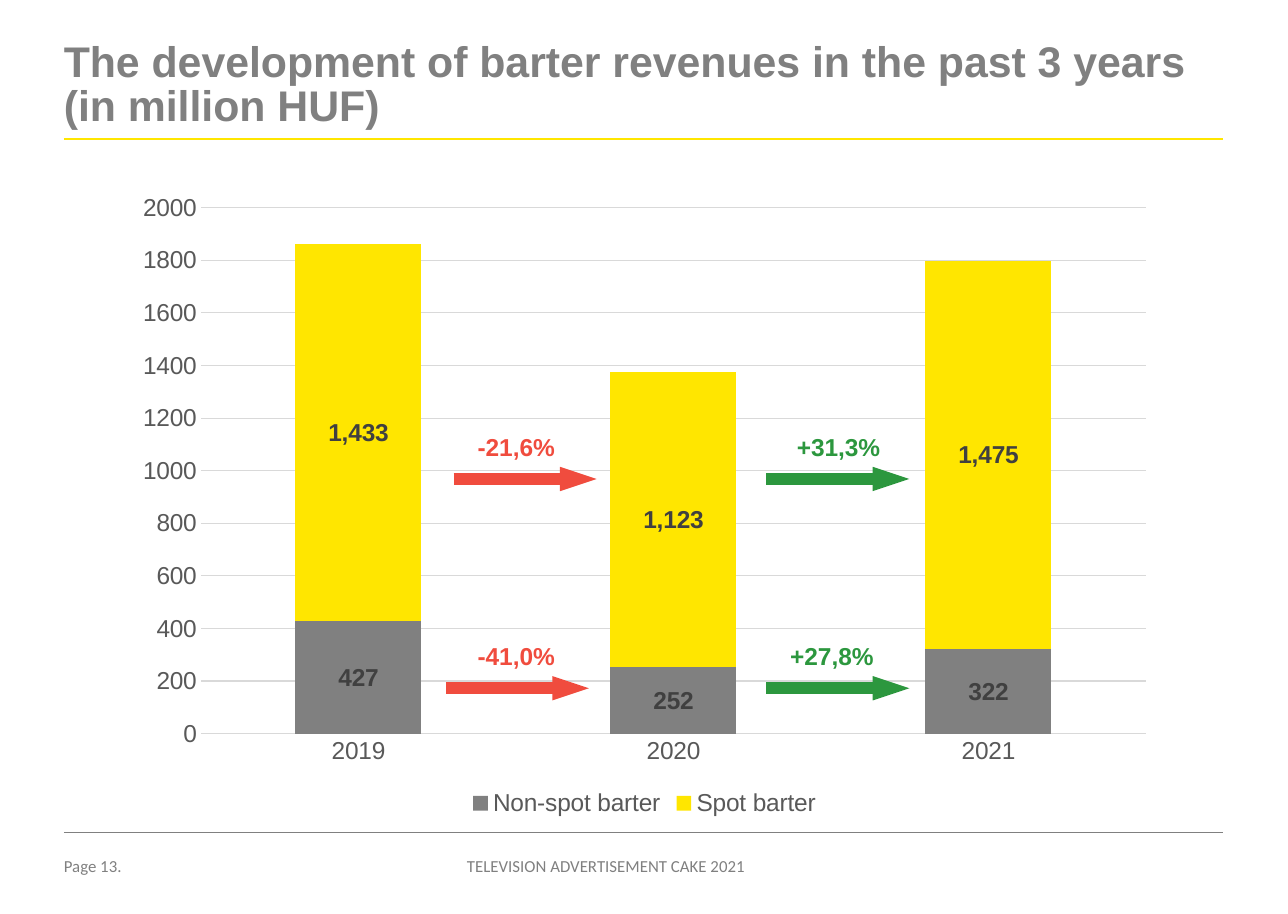
from pptx import Presentation
from pptx.chart.data import CategoryChartData
from pptx.dml.color import RGBColor
from pptx.enum.chart import XL_CHART_TYPE, XL_LABEL_POSITION, XL_LEGEND_POSITION, XL_TICK_MARK
from pptx.enum.shapes import MSO_CONNECTOR
from pptx.enum.text import PP_ALIGN
from pptx.oxml.ns import qn
from pptx.util import Inches, Pt
from lxml import etree

STACKED = XL_CHART_TYPE.COLUMN_STACKED
CENTER = XL_LABEL_POSITION.CENTER
BOTTOM = XL_LEGEND_POSITION.BOTTOM
NO_TICK = XL_TICK_MARK.NONE
STRAIGHT = MSO_CONNECTOR.STRAIGHT
LEFT, MIDDLE = PP_ALIGN.LEFT, PP_ALIGN.CENTER

GRAY, YELLOW, RED, GREEN = "808080", "FFE600", "F04C3E", "2C973E"
RULE, INK, DARK = "D9D9D9", "595959", "404040"
WIDE, HIGH = 11.7, 8.3
EDGE, SPAN = 0.58, 10.53
YEARS = ["2019", "2020", "2021"]
SERIES = [
    ("Non-spot barter", (427, 252, 322), GRAY),
    ("Spot barter", (1433, 1123, 1475), YELLOW),
]
CHANGES = [
    ("-21,6%", 4.12, 4.24, 4.35, RED),
    ("-41,0%", 4.05, 4.24, 6.25, RED),
    ("+31,3%", 6.96, 7.14, 4.35, GREEN),
    ("+27,8%", 6.96, 7.08, 6.25, GREEN),
]


def color(code):
    """Turn a hex string into a colour."""
    return RGBColor.from_string(code)


def style(font, size, code, bold=False, name="Arial"):
    """Set the look of a font."""
    font.name, font.size, font.bold = name, Pt(size), bold
    font.color.rgb = color(code)


def add_text(slide, box, text, size, code, bold=False, name="Arial", align=LEFT, inset=0):
    """Place one paragraph in a box and return it."""
    frame = slide.shapes.add_textbox(*map(Inches, box)).text_frame
    frame.word_wrap = True
    frame.margin_left = frame.margin_right = Inches(inset)
    frame.margin_top = frame.margin_bottom = Inches(inset / 2)
    para = frame.paragraphs[0]
    para.text = text
    para.alignment = align
    style(para.runs[0].font, size, code, bold, name)
    return para


def add_rule(slide, left, top, width, code, weight):
    """Draw a level line and return its line element."""
    rule = slide.shapes.add_connector(
        STRAIGHT, Inches(left), Inches(top), Inches(left + width), Inches(top))
    rule.line.color.rgb = color(code)
    rule.line.width = Pt(weight)
    props = rule.line._get_or_add_ln()
    props.addnext(etree.Element(qn("a:effectLst")))
    return props


def add_header(slide, left, top, width, height):
    """Place the title above its yellow rule."""
    title = add_text(slide, (left, top, width, height),
                     "The development of barter revenues in the past 3 years (in million HUF)",
                     28, GRAY, True)
    title.line_spacing = 0.85
    add_rule(slide, left, top + 0.87, width, YELLOW, 1.5)


def add_footer(slide, left, top, width, height):
    """Place the page number and report name below a thin rule."""
    add_rule(slide, left, top, width, GRAY, 0.25)
    row = top + 0.21
    add_text(slide, (left, row, 0.85, height), "Page 13.", 11, GRAY, name="Calibri")
    add_text(slide, (left + 2.73, row, 4.39, height),
             "TELEVISION ADVERTISEMENT CAKE 2021", 11, GRAY, name="Calibri", align=MIDDLE)


def add_bars(slide, left, top, width, height):
    """Chart barter revenue by year as stacked columns."""
    data = CategoryChartData(number_format="#,##0")
    data.categories = YEARS
    for name, values, _ in SERIES:
        data.add_series(name, values)
    chart = slide.shapes.add_chart(
        STACKED, *map(Inches, (left, top, width, height)), data).chart
    style(chart.font, 16, INK)
    chart.has_title = False
    chart.has_legend = True
    chart.legend.position = BOTTOM
    chart.legend.include_in_layout = False
    style(chart.legend.font, 16, INK)

    years, scale = chart.category_axis, chart.value_axis
    for axis in (years, scale):
        axis.major_tick_mark = axis.minor_tick_mark = NO_TICK
        style(axis.tick_labels.font, 16, INK)
    scale.minimum_scale, scale.maximum_scale, scale.major_unit = 0, 2000, 200
    scale.tick_labels.number_format = "0"
    scale.tick_labels.number_format_is_linked = False
    scale.format.line.fill.background()
    for line in (years.format.line, scale.major_gridlines.format.line):
        line.color.rgb = color(RULE)
        line.width = Pt(0.75)

    plot = chart.plots[0]
    plot.gap_width, plot.overlap, plot.vary_by_categories = 150, 100, False
    for bars, (_, _, code) in zip(plot.series, SERIES):
        bars.format.fill.solid()
        bars.format.fill.fore_color.rgb = color(code)
        labels = bars.data_labels
        labels.show_value = True
        labels.position = CENTER
        labels.number_format = "#,##0"
        labels.number_format_is_linked = False
        style(labels.font, 16, DARK, True)


def add_change(slide, text, start, left, top, code):
    """Draw an arrow between two years with its change above."""
    line = add_rule(slide, start, top, 1.3, code, 8)
    etree.SubElement(line, qn("a:tailEnd"), type="triangle", w="sm", len="med")
    add_text(slide, (left, top - 0.48, 1.17, 0.47), text, 16, code, True, inset=0.1)


def main():
    """Build and save the slide."""
    deck = Presentation()
    deck.slide_width, deck.slide_height = Inches(WIDE), Inches(HIGH)
    slide = deck.slides.add_slide(deck.slide_layouts[6])
    add_header(slide, EDGE, 0.39, SPAN, 0.94)
    add_footer(slide, EDGE, 7.56, SPAN, 0.24)
    add_bars(slide, 1.11, 1.65, 9.49, 5.81)
    for change in CHANGES:
        add_change(slide, *change)
    deck.save("out.pptx")


if __name__ == "__main__":
    main()
